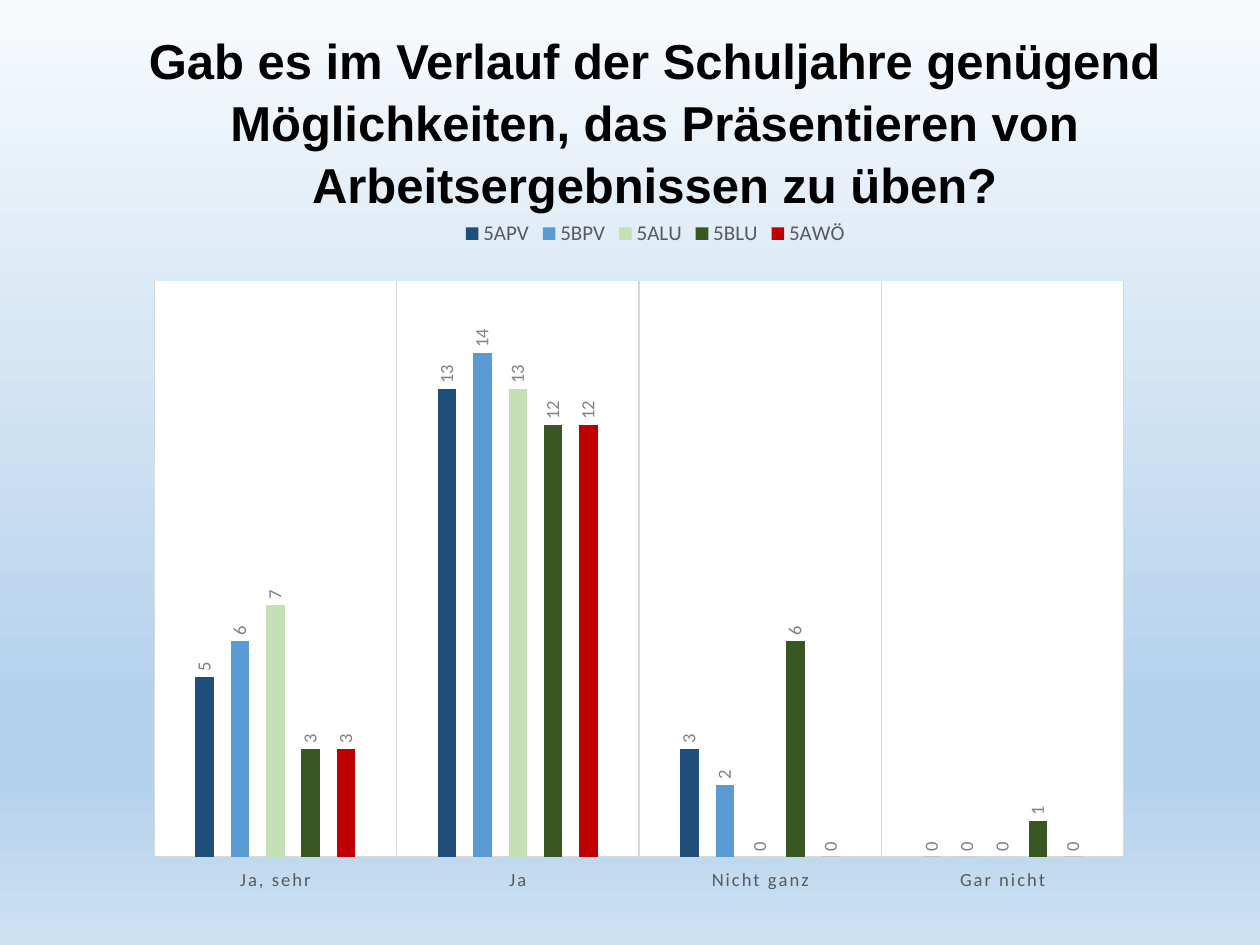
from dataclasses import dataclass

from lxml.etree import SubElement
from pptx import Presentation
from pptx.chart.data import CategoryChartData
from pptx.dml.color import RGBColor
from pptx.enum.chart import (XL_CHART_TYPE, XL_LABEL_POSITION,
                             XL_LEGEND_POSITION, XL_TICK_LABEL_POSITION,
                             XL_TICK_MARK)
from pptx.enum.text import MSO_ANCHOR, PP_ALIGN
from pptx.oxml import parse_xml
from pptx.oxml.ns import nsdecls, qn
from pptx.util import Inches, Pt

WIDTH, HEIGHT = Inches(10), Inches(7.5)
BLACK = RGBColor(0x00, 0x00, 0x00)
TEXT_GREY = RGBColor(0x59, 0x59, 0x59)
LABEL_GREY = RGBColor(0x80, 0x80, 0x80)
LINE_GREY = RGBColor(0xD9, 0xD9, 0xD9)
WHITE = RGBColor(0xFF, 0xFF, 0xFF)
SKY_STOPS = {0: RGBColor(0xF7, 0xFA, 0xFD), 74: RGBColor(0xB5, 0xD2, 0xEC),
             83: RGBColor(0xB5, 0xD2, 0xEC), 100: RGBColor(0xCE, 0xE1, 0xF2)}
QUESTION = ("Gab es im Verlauf der Schuljahre genügend Möglichkeiten, "
            "das Präsentieren von Arbeitsergebnissen zu üben?")
ANSWERS = ("Ja, sehr", "Ja", "Nicht ganz", "Gar nicht")
PLOT_SHARES = {"x": 0.003, "y": 0.108, "w": 0.962, "h": 0.838}


@dataclass(frozen=True)
class SchoolClass:
    name: str
    votes: tuple[int, ...]
    color: RGBColor


@dataclass(frozen=True)
class Box:
    """Place on the slide, as shares of its width and height."""
    left: float
    top: float
    width: float
    height: float

    def lengths(self) -> tuple[int, ...]:
        return (int(self.left * WIDTH), int(self.top * HEIGHT),
                int(self.width * WIDTH), int(self.height * HEIGHT))


CLASSES = (
    SchoolClass("5APV", (5, 13, 3, 0), RGBColor(0x1F, 0x4E, 0x79)),
    SchoolClass("5BPV", (6, 14, 2, 0), RGBColor(0x5B, 0x9B, 0xD5)),
    SchoolClass("5ALU", (7, 13, 0, 0), RGBColor(0xC5, 0xE0, 0xB4)),
    SchoolClass("5BLU", (3, 12, 6, 1), RGBColor(0x38, 0x57, 0x23)),
    SchoolClass("5AWÖ", (3, 12, 0, 0), RGBColor(0xC0, 0x00, 0x00)),
)
TITLE_BOX = Box(0.067, 0.019, 0.905, 0.265)
CHART_BOX = Box(0.12, 0.219, 0.8, 0.727)


def set_values(target, values: dict) -> None:
    for name, value in values.items():
        setattr(target, name, value)


def set_font(font, size: float, color: RGBColor, name: str = "Calibri",
             bold: bool = False) -> None:
    set_values(font, {"size": Pt(size), "name": name, "bold": bold})
    font.color.rgb = color


def paint_background(slide) -> None:
    fill = slide.background.fill
    fill.gradient()
    fill.gradient_angle = 270
    stops = next(slide.element.iter(qn("a:gsLst")))
    for stop in list(stops):
        stops.remove(stop)
    for percent, color in SKY_STOPS.items():
        stop = SubElement(stops, qn("a:gs"), pos=str(percent * 1000))
        SubElement(stop, qn("a:srgbClr"), val=str(color))


def add_title(slide, box: Box) -> None:
    frame = slide.shapes.add_textbox(*box.lengths()).text_frame
    set_values(frame, {"word_wrap": True, "vertical_anchor": MSO_ANCHOR.TOP,
                       "margin_top": Inches(0.08)})
    paragraph = frame.paragraphs[0]
    set_values(paragraph, {"alignment": PP_ALIGN.CENTER, "line_spacing": 1.05})
    run = paragraph.add_run()
    run.text = QUESTION
    set_font(run.font, 28, BLACK, "Arial", True)


def style_plot_area(chart) -> None:
    """Fix the inner plot area and fill it white."""
    area = next(chart.element.iter(qn("c:plotArea")))
    for layout in area.findall(qn("c:layout")):
        area.remove(layout)
    shares = "".join(f'<c:{key} val="{share}"/>'
                     for key, share in PLOT_SHARES.items())
    area.insert(0, parse_xml(
        f'<c:layout {nsdecls("c")}><c:manualLayout>'
        '<c:layoutTarget val="inner"/><c:xMode val="edge"/>'
        f'<c:yMode val="edge"/>{shares}</c:manualLayout></c:layout>'))
    area.append(parse_xml(
        f'<c:spPr {nsdecls("c", "a")}><a:solidFill>'
        f'<a:srgbClr val="{WHITE}"/></a:solidFill></c:spPr>'))


def style_axes(chart) -> None:
    axis = chart.category_axis
    set_values(axis, {"major_tick_mark": XL_TICK_MARK.NONE,
                      "minor_tick_mark": XL_TICK_MARK.NONE,
                      "tick_label_position": XL_TICK_LABEL_POSITION.LOW,
                      "has_major_gridlines": True})
    set_font(axis.tick_labels.font, 10.6, TEXT_GREY)
    for line in (axis.format.line, axis.major_gridlines.format.line):
        line.color.rgb = LINE_GREY
        line.width = Pt(0.75)
    # Letter spacing of the answers
    for properties in chart.element.xpath(".//c:catAx/c:txPr//a:defRPr"):
        properties.set("spc", "120")
    set_values(chart.value_axis, {"minimum_scale": 0, "maximum_scale": 16,
                                  "has_major_gridlines": False,
                                  "visible": False})


def style_series(chart) -> None:
    plot = chart.plots[0]
    set_values(plot, {"gap_width": 444, "overlap": -90,
                      "vary_by_categories": False})
    for series, school_class in zip(plot.series, CLASSES):
        series.format.fill.solid()
        series.format.fill.fore_color.rgb = school_class.color
        labels = series.data_labels
        set_values(labels, {"show_value": True,
                            "position": XL_LABEL_POSITION.OUTSIDE_END})
        set_font(labels.font, 10.6, LABEL_GREY)
    # Labels read upwards
    for body in chart.element.xpath(".//c:dLbls/c:txPr/a:bodyPr"):
        body.set("rot", "-5400000")
        body.set("vert", "horz")


def add_votes_chart(slide, box: Box) -> None:
    data = CategoryChartData()
    data.categories = ANSWERS
    for school_class in CLASSES:
        data.add_series(school_class.name, school_class.votes)
    chart = slide.shapes.add_chart(XL_CHART_TYPE.COLUMN_CLUSTERED,
                                   *box.lengths(), data).chart
    set_values(chart, {"has_title": False, "has_legend": True})
    set_font(chart.font, 10, BLACK)
    set_values(chart.legend, {"position": XL_LEGEND_POSITION.TOP,
                              "include_in_layout": False})
    set_font(chart.legend.font, 12, TEXT_GREY)
    style_axes(chart)
    style_series(chart)
    style_plot_area(chart)


def main() -> None:
    presentation = Presentation()
    set_values(presentation, {"slide_width": WIDTH, "slide_height": HEIGHT})
    slide = presentation.slides.add_slide(presentation.slide_layouts[6])
    paint_background(slide)
    add_votes_chart(slide, CHART_BOX)
    add_title(slide, TITLE_BOX)
    presentation.save("out.pptx")


if __name__ == "__main__":
    main()
